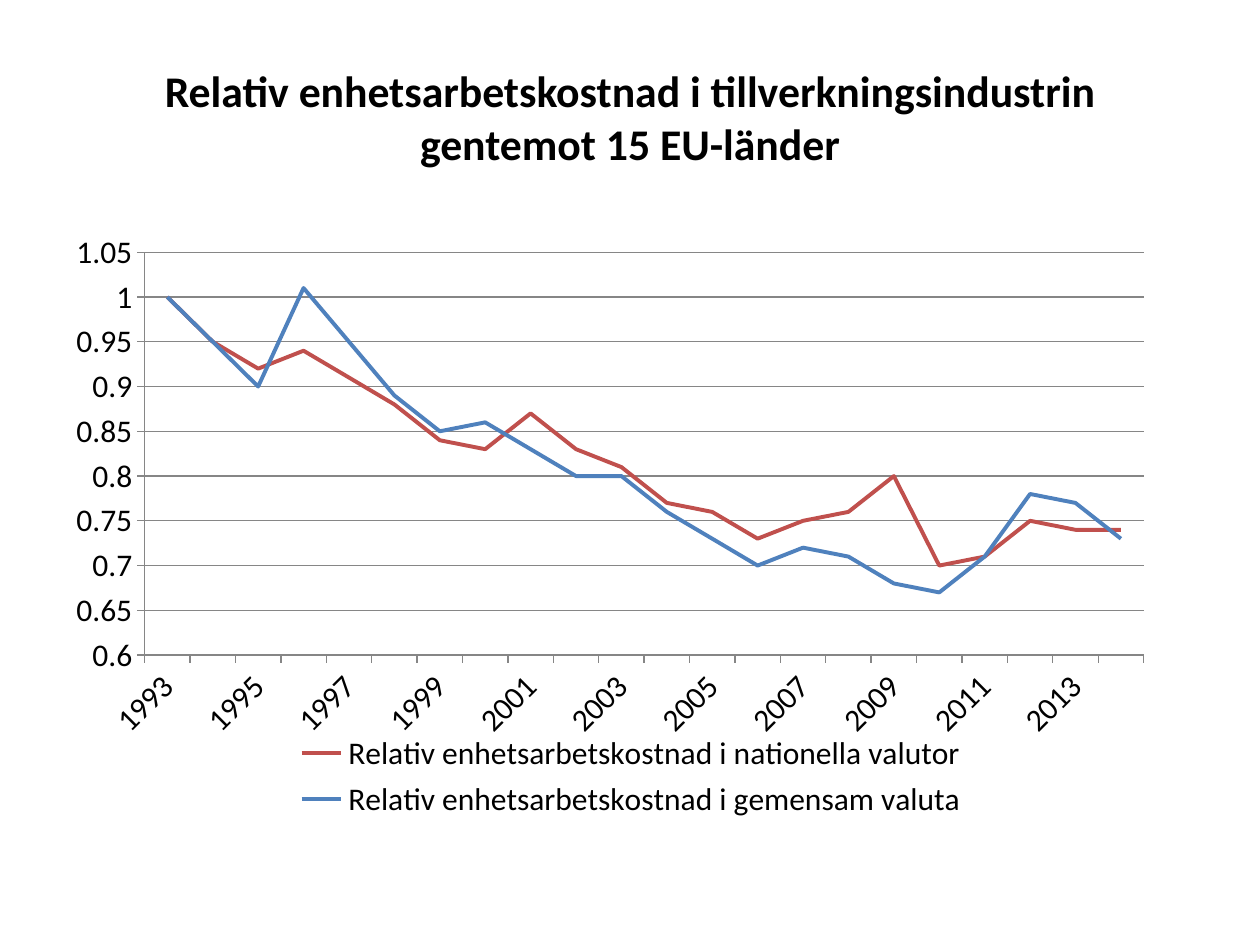
from lxml import etree
from pptx import Presentation
from pptx.chart.data import CategoryChartData as ChartData
from pptx.dml.color import RGBColor
from pptx.enum.chart import XL_CHART_TYPE as CT, XL_LEGEND_POSITION as LP
from pptx.enum.chart import XL_MARKER_STYLE as MS, XL_TICK_MARK as TM
from pptx.enum.text import MSO_ANCHOR as ANCHOR, MSO_AUTO_SIZE as AUTO, PP_ALIGN as ALIGN
from pptx.oxml.ns import qn
from pptx.util import Pt

TITLE = "Relativ enhetsarbetskostnad i tillverkningsindustrin gentemot 15 EU-länder"
SERIES = [
    ("Relativ enhetsarbetskostnad i nationella valutor ", "C0504D", 1,
     [1, 0.95, 0.92, 0.94, 0.91, 0.88, 0.84, 0.83, 0.87, 0.83, 0.81,
      0.77, 0.76, 0.73, 0.75, 0.76, 0.8, 0.7, 0.71, 0.75, 0.74, 0.74]),
    ("Relativ enhetsarbetskostnad i gemensam valuta", "4F81BD", 0,
     [1, 0.95, 0.9, 1.01, 0.95, 0.89, 0.85, 0.86, 0.83, 0.8, 0.8,
      0.76, 0.73, 0.7, 0.72, 0.71, 0.68, 0.67, 0.71, 0.78, 0.77, 0.73]),
]


def rgb(value):
    return RGBColor.from_string(value)


def set_all(target, values):
    for name, value in values.items():
        setattr(target, name, value)


def set_font(font, size, bold=False):
    set_all(font, {"name": "Calibri", "size": Pt(size), "bold": bold})
    font.color.rgb = rgb("000000")


def set_line(line, color, width):
    line.color.rgb = rgb(color)
    line.width = Pt(width)


def set_layout(parent, before, percents, inner=False):
    for old in parent.findall(qn("c:layout")):
        parent.remove(old)
    layout = etree.Element(qn("c:layout"))
    manual = etree.SubElement(layout, qn("c:manualLayout"))
    values = {"layoutTarget": "inner"} if inner else {}
    values.update(xMode="edge", yMode="edge")
    values.update(zip("xywh", (str(percent / 100) for percent in percents)))
    for name, value in values.items():
        etree.SubElement(manual, qn("c:" + name)).set("val", value)
    parent.find(qn(before)).addprevious(layout)


def add_title(s):
    sp = s.shapes.title
    set_all(sp, {"left": Pt(36), "top": Pt(21.6), "width": Pt(648), "height": Pt(90)})
    tf = sp.text_frame
    set_all(tf, {"word_wrap": True, "auto_size": AUTO.NONE, "vertical_anchor": ANCHOR.MIDDLE})
    p = tf.paragraphs[0]
    p.alignment = ALIGN.CENTER
    r = p.add_run()
    r.text = TITLE
    set_font(r.font, 25, True)


def format_axes(chart):
    years, values = chart.category_axis, chart.value_axis
    set_all(values, {"minimum_scale": 0.6, "maximum_scale": 1.05, "major_unit": 0.05,
                     "has_major_gridlines": True})
    set_all(values.tick_labels, {"number_format": "General", "number_format_is_linked": False})
    set_line(values.major_gridlines.format.line, "868686", 0.75)
    for axis in (years, values):
        set_all(axis, {"major_tick_mark": TM.OUTSIDE, "minor_tick_mark": TM.NONE})
        set_line(axis.format.line, "868686", 0.75)
        set_font(axis.tick_labels.font, 18)
    xml = years._element
    xml.find(qn("c:txPr")).find(qn("a:bodyPr")).set("rot", "-2700000")
    skip = etree.Element(qn("c:tickLblSkip"), val="2")
    xml.find(qn("c:noMultiLvlLbl")).addprevious(skip)


def add_line_chart(s):
    data = ChartData()
    data.categories = [str(year) for year in range(1993, 2015)]
    for name, _, _, values in SERIES:
        data.add_series(name, values)
    chart = s.shapes.add_chart(CT.LINE, Pt(36), Pt(126), Pt(648), Pt(356.4), data).chart
    set_all(chart, {"has_title": False, "has_legend": True})
    set_font(chart.font, 18)
    for series, (_, color, order, _) in zip(list(chart.plots[0].series), SERIES):
        series.smooth = False
        series.marker.style = MS.NONE
        set_line(series.format.line, color, 2.25)
        series._element.find(qn("c:order")).set("val", str(order))
    format_axes(chart)
    legend = chart.legend
    set_all(legend, {"position": LP.RIGHT, "include_in_layout": False})
    set_font(legend.font, 18)
    set_layout(legend._element, "c:overlay", (19.9, 81, 61, 16.2))
    plot_area = chart._chartSpace.chart.plotArea
    set_layout(plot_area, "c:lineChart", (7.2, 5.1, 88.1, 64.6), True)


def main():
    prs = Presentation()
    set_all(prs, {"slide_width": Pt(720), "slide_height": Pt(540)})
    s = prs.slides.add_slide(prs.slide_layouts[5])
    add_title(s)
    add_line_chart(s)
    prs.save("out.pptx")


if __name__ == "__main__":
    main()
